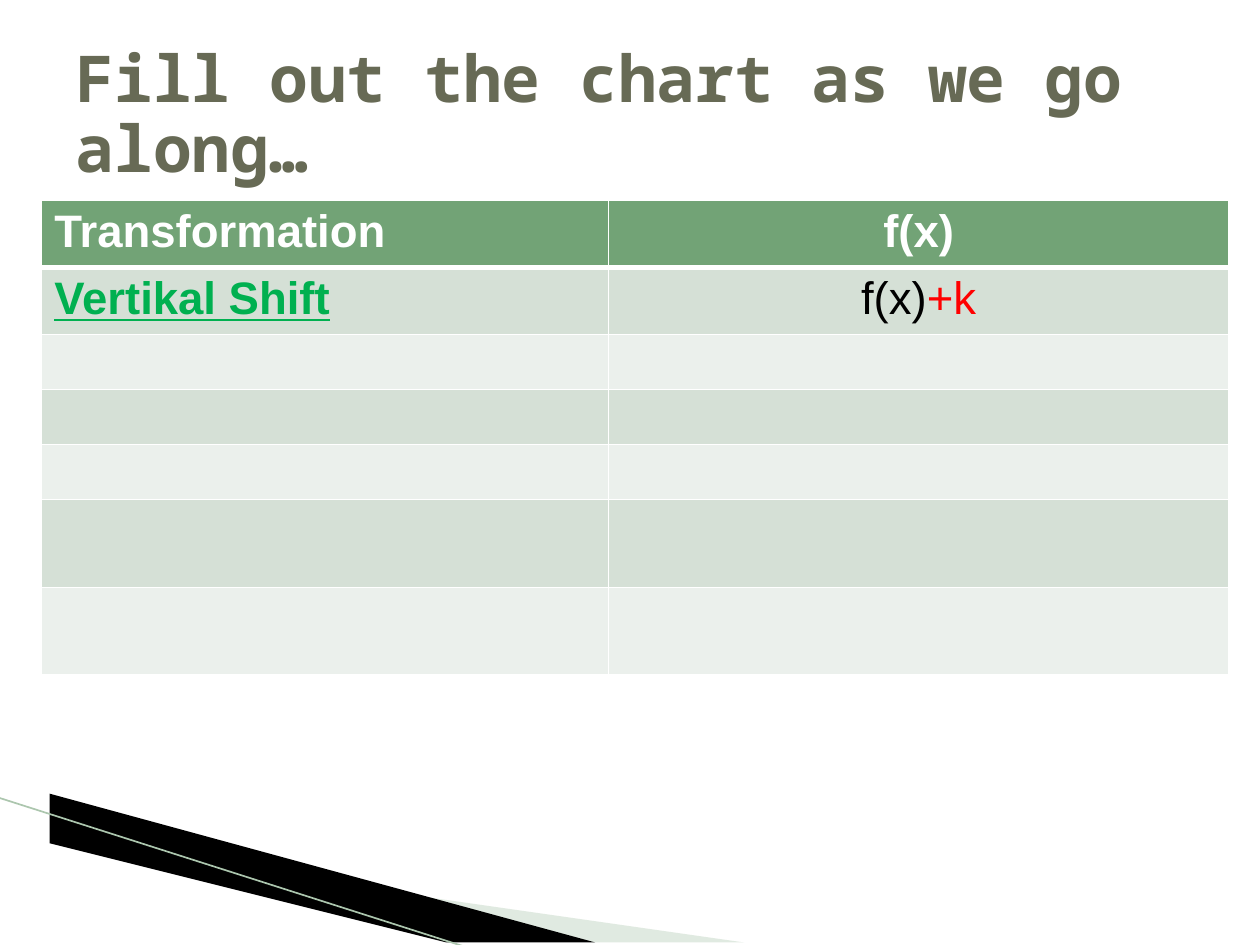
from pptx import Presentation
from pptx import util as u
from pptx.dml.color import RGBColor
from pptx.enum import shapes, text
from pptx.oxml import ns, xmlchemy

WHITE = RGBColor(0xFF, 0xFF, 0xFF)
BLACK = RGBColor(0, 0, 0)
RED = RGBColor(0xFF, 0, 0)
LEAF = RGBColor(0x00, 0xB0, 0x50)
OLIVE = RGBColor(0x67, 0x6A, 0x55)
HEAD = RGBColor(0x72, 0xA3, 0x76)
BANDS = RGBColor(0xD5, 0xE0, 0xD6), RGBColor(0xEB, 0xF0, 0xEC)
SAGE = RGBColor(0xB3, 0xCB, 0xB5)
EDGE = RGBColor(0xAC, 0xC6, 0xAE)


def add(parent, tag, **attrs):
    node = xmlchemy.OxmlElement(tag)
    for key, val in attrs.items():
        node.set(key, str(val))
    parent.append(node)
    return node


class Deck:
    body, mono, size = "Arial", "Noto Sans Mono", 26

    def __init__(self, slide):
        self.slide = slide

    def wedge(self, points, color, alpha=100):
        pen = self.slide.shapes.build_freeform(*points[0], scale=u.Cm(1))
        pen.add_line_segments(points[1:], close=True)
        shape = pen.convert_to_shape()
        shape.shadow.inherit = False
        shape.fill.solid()
        shape.fill.fore_color.rgb = color
        shape.line.fill.background()
        if alpha < 100:
            clr = shape.element.spPr.find(".//" + ns.qn("a:srgbClr"))
            add(clr, "a:alpha", val=alpha * 1000)

    def line(self, start, end, color, width):
        ends = [u.Cm(v) for v in (*start, *end)]
        line = self.slide.shapes.add_connector(shapes.MSO_CONNECTOR.STRAIGHT, *ends)
        line.line.color.rgb = color
        line.line.width = u.Pt(width)
        add(line.element.spPr, "a:effectLst")

    def title(self, words, *box):
        title = self.slide.shapes.title
        title.left, title.top, title.width, title.height = map(u.Cm, box)
        frame = title.text_frame
        frame.text = words
        frame.word_wrap = True
        frame.auto_size = text.MSO_AUTO_SIZE.NONE
        frame.vertical_anchor = text.MSO_ANCHOR.MIDDLE
        para = frame.paragraphs[0]
        para.alignment = text.PP_ALIGN.LEFT
        para.line_spacing = 0.9
        font = para.font
        font.name, font.size, font.bold = self.mono, u.Pt(36.9), True
        font.color.rgb = OLIVE
        # Keep the title in front
        self.slide.shapes.element.append(title.element)

    def table(self, left, top, cols, rows):
        frame = self.slide.shapes.add_table(
            len(rows), len(cols), u.Cm(left), u.Cm(top),
            u.Cm(sum(cols)), u.Cm(sum(rows)))
        table = frame.table
        for col, width in zip(table.columns, cols):
            col.width = u.Cm(width)
        for i, height in enumerate(rows):
            table.rows[i].height = u.Cm(height)
            for cell in table.rows[i].cells:
                self.rule(cell, top=3 if i == 1 else 1, base=3 if i == 0 else 1)
                cell.fill.solid()
                cell.fill.fore_color.rgb = BANDS[(i - 1) % 2] if i else HEAD
        return table

    def rule(self, cell, top, base):
        props = cell._tc.get_or_add_tcPr()
        for side, width in zip("LRTB", (1, 1, top, base)):
            edge = add(props, "a:ln" + side, w=u.Pt(width))
            add(add(edge, "a:solidFill"), "a:srgbClr", val=WHITE)

    def label(self, cell, runs, bold=True, under=False, center=False):
        para = cell.text_frame.paragraphs[0]
        para.alignment = text.PP_ALIGN.CENTER if center else text.PP_ALIGN.LEFT
        font = para.font
        font.name, font.size = self.body, u.Pt(self.size)
        font.bold, font.underline = bold, under
        for words, color in runs:
            run = para.add_run()
            run.text = words
            run.font.color.rgb = color


def main():
    prs = Presentation()
    prs.slide_width, prs.slide_height = u.Cm(25.4), u.Cm(19.05)
    deck = Deck(prs.slides.add_slide(prs.slide_layouts[5]))

    # Corner wedges
    deck.wedge([(1.4, 16.54), (15.11, 19.08), (11.58, 19.08), (1.4, 16.51)], SAGE, 40)
    deck.wedge([(1.35, 16.48), (11.61, 19.08), (9.45, 19.1), (1.37, 16.51)], BLACK)
    deck.line((-0.03, 16.08), (9.42, 19.1), EDGE, 0.95)

    # Table of transformations, with rows left to fill in
    table = deck.table(0.84, 4.04, [11.43, 12.5], [1.35] * 2 + [1.11] * 3 + [1.77] * 2)
    deck.label(table.cell(0, 0), [("Transformation", WHITE)])
    deck.label(table.cell(0, 1), [("f(x)", WHITE)], center=True)
    deck.label(table.cell(1, 0), [("Vertikal Shift", LEAF)], under=True)
    deck.label(table.cell(1, 1), [("f(x)", BLACK), ("+k", RED)], bold=False, center=True)

    # Title
    deck.title("Fill out the chart as we go along…", 1.27, 0.76, 22.86, 3.18)
    prs.save("out.pptx")


if __name__ == "__main__":
    main()
